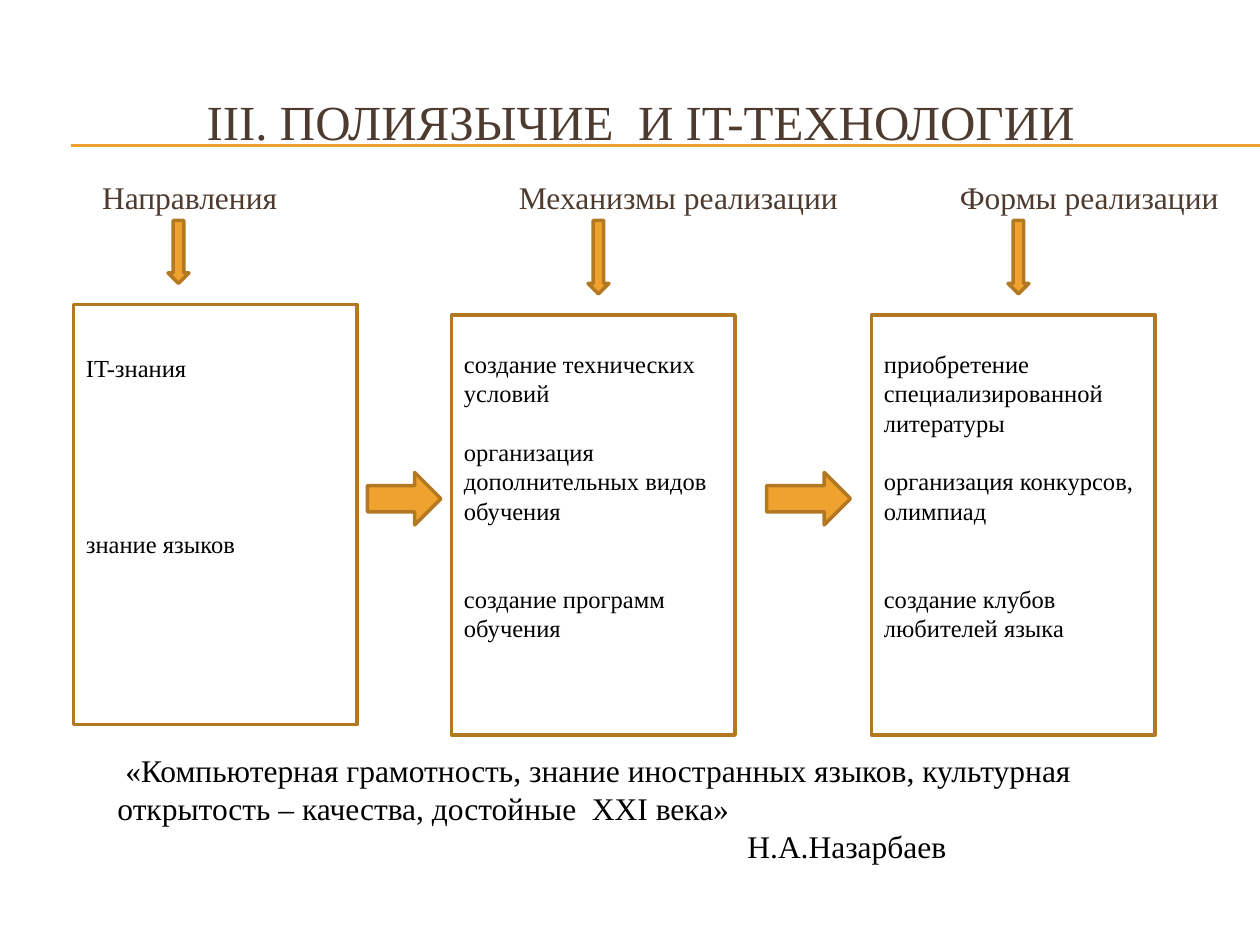
import pptx
import pptx.util
import pptx.dml.color
import pptx.enum.shapes
import pptx.enum.text
import pptx.oxml.ns
import lxml.etree

Pt = pptx.util.Pt
RGB = pptx.dml.color.RGBColor
KIND = pptx.enum.shapes.MSO_SHAPE
ALIGN = pptx.enum.text.PP_ALIGN
ANCHOR = pptx.enum.text.MSO_ANCHOR

GOLD = RGB(0xF0, 0xA2, 0x2E)
EDGE = RGB(0xB2, 0x78, 0x22)
BROWN = RGB(0x4E, 0x3B, 0x30)
BLACK = RGB(0, 0, 0)
FONT = "Times New Roman"
STEP = 16.75

COLUMNS = [
    ("Направления", 58.3, (42, 174), 36, 96,
     [("IT-знания", 5), ("знание языков", 0)], 11),
    ("Механизмы реализации", 296.5, (258, 180), 78, 336,
     [("создание технических условий", 1),
      ("организация  дополнительных видов обучения", 2),
      ("создание программ обучения", 0)], 12),
    ("Формы реализации", 548.5, (498, 180), 42, 576,
     [("приобретение специализированной литературы", 1),
      ("организация конкурсов, олимпиад", 2),
      ("создание клубов любителей языка", 0)], 12),
]


def write(frame, text, size=18, color=BLACK, align=ALIGN.LEFT, first=True,
          after=0, pitch=None, left=0, indent=0):
    para = frame.paragraphs[0] if first else frame.add_paragraph()
    para.alignment = align
    para.space_before = Pt(0)
    para.space_after = Pt(after)
    if pitch:
        para.line_spacing = Pt(pitch)
    props = para._p.get_or_add_pPr()
    props.set("marL", str(Pt(left)))
    props.set("indent", str(Pt(indent)))
    run = para.add_run()
    run.text = text
    run.font.name = FONT
    run.font.size = Pt(size)
    run.font.color.rgb = color


def frame_in(shape, side=7.2, top=3.6, wrap=True):
    frame = shape.text_frame
    frame.word_wrap = wrap
    frame.vertical_anchor = ANCHOR.TOP
    frame.margin_left = frame.margin_right = Pt(side)
    frame.margin_top = Pt(top)
    frame.margin_bottom = Pt(0)
    return frame


def draw(slide, kind, box, fill=None):
    shape = slide.shapes.add_shape(kind, *map(Pt, box))
    shape.shadow.inherit = False
    if fill is None:
        shape.fill.background()
    else:
        shape.fill.solid()
        shape.fill.fore_color.rgb = fill
    shape.line.color.rgb = EDGE
    shape.line.width = Pt(2)
    return shape


def add_title(slide, box):
    title = slide.shapes.title
    title.left, title.top, title.width, title.height = map(Pt, box)
    title.text_frame.vertical_anchor = ANCHOR.MIDDLE
    write(title.text_frame, "III. ПОЛИЯЗЫЧИЕ  И IT-ТЕХНОЛОГИИ",
          size=28, color=BROWN, align=ALIGN.CENTER)


def add_rules(slide, left, right, tops):
    for top in tops:
        rule = slide.shapes.add_connector(
            pptx.enum.shapes.MSO_CONNECTOR.STRAIGHT,
            Pt(left), Pt(top), Pt(right), Pt(top))
        rule.line.color.rgb = GOLD
        rule.line.width = Pt(0.75)
        lxml.etree.SubElement(rule._element.spPr,
                              pptx.oxml.ns.qn("a:effectLst"))


def add_head(slide, text, box):
    head = slide.shapes.add_textbox(*map(Pt, box))
    write(frame_in(head, side=0, top=0, wrap=False), text, color=BROWN)


def add_card(slide, items, lines, box):
    card = draw(slide, KIND.RECTANGLE, box)
    frame = frame_in(card, top=(box[3] - lines * STEP) / 2)
    for i, (text, gap) in enumerate(items):
        write(frame, text, size=14, first=i == 0,
              after=gap * STEP, pitch=STEP)


def add_quote(slide, box):
    frame = frame_in(slide.shapes.add_textbox(*map(Pt, box)))
    write(frame, "«Компьютерная грамотность, знание иностранных языков, "
          "культурная открытость – качества, достойные  ХХІ века»",
          pitch=21.5, indent=4.5)
    write(frame, "Н.А.Назарбаев", first=False, pitch=21.5, left=360)


def main():
    deck = pptx.Presentation()
    deck.slide_width, deck.slide_height = Pt(720), Pt(540)
    slide = deck.slides.add_slide(deck.slide_layouts[5])
    add_rules(slide, 40.5, 720, (82.8, 83.4))
    add_title(slide, (24, 36, 684, 66))
    for name, left, (x, y), _, tip, items, lines in COLUMNS:
        add_head(slide, name, (left, 101.5, 190, 22))
        add_card(slide, items, lines, (x, y, 162, 240))
        draw(slide, KIND.DOWN_ARROW, (tip, 126, 12, y - 138), GOLD)
    for left, width in ((210, 42), (438, 48)):
        draw(slide, KIND.RIGHT_ARROW, (left, 270, width, 30), GOLD)
    add_quote(slide, (60, 426, 624, 73))
    deck.save("out.pptx")


if __name__ == "__main__":
    main()
